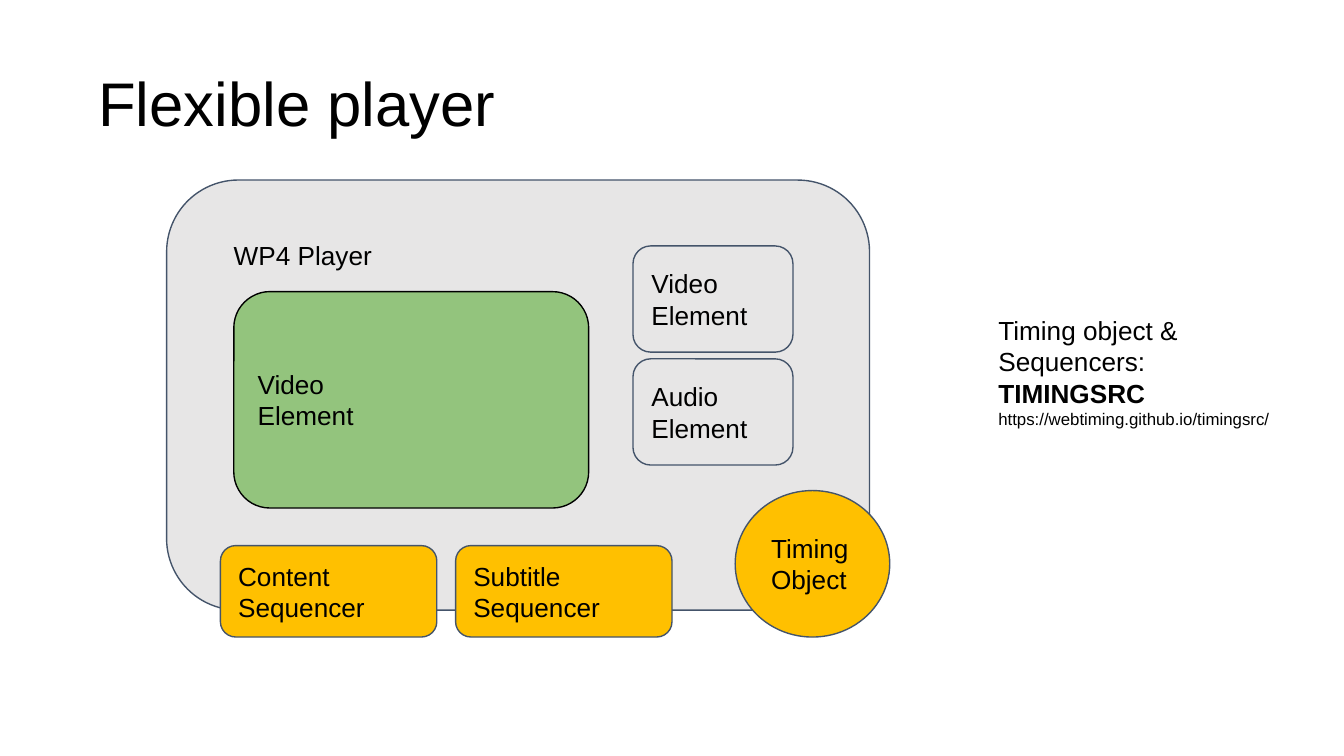
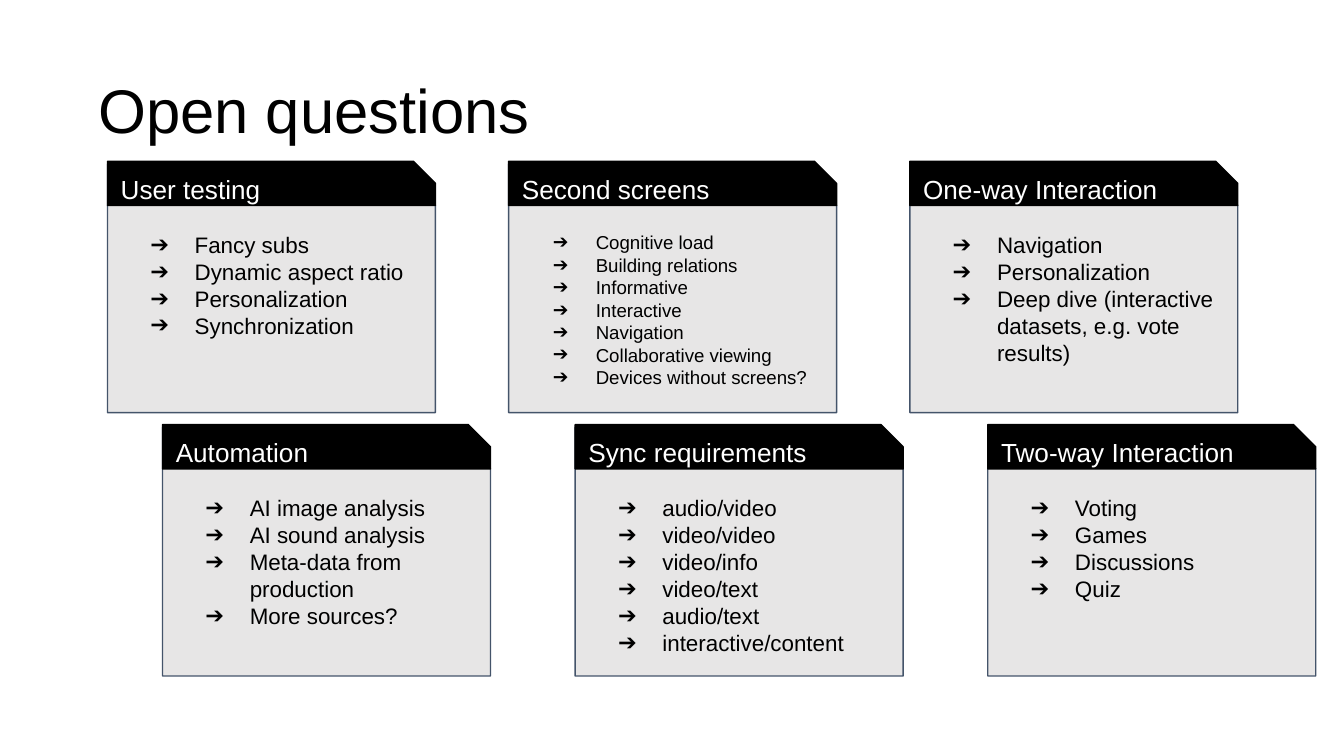
"""Build two slides: the flexible player diagram and the open questions cards."""
from lxml.etree import SubElement
from pptx import Presentation
from pptx.dml.color import RGBColor
from pptx.enum.shapes import MSO_SHAPE
from pptx.enum.text import MSO_ANCHOR, MSO_AUTO_SIZE, PP_ALIGN
from pptx.oxml.ns import qn
from pptx.util import Inches, Pt

FONT = "Arial"
BLACK, WHITE, GREY, SLATE = "000000", "FFFFFF", "E7E6E6", "44546A"
AMBER, GREEN = "FFC000", "93C47D"


def rgb(color):
    return RGBColor.from_string(color)


def add_box(shapes, kind, at, lines=(), fill=None, line=SLATE, size=14, color=BLACK, adj=None):
    at = [Inches(v) for v in at]
    if kind is None:
        sp = shapes.add_textbox(*at)
    else:
        sp = shapes.add_shape(kind, *at)
        sp.shadow.inherit = False
        sp.fill.solid()
        sp.fill.fore_color.rgb = rgb(fill)
        sp.line.color.rgb = rgb(line)
        sp.line.width = Pt(0.75)
        if adj is not None:
            sp.adjustments[0] = adj
    tf = sp.text_frame
    tf.word_wrap = True
    tf.margin_left = tf.margin_right = tf.margin_top = tf.margin_bottom = Inches(0.1)
    tf.vertical_anchor = MSO_ANCHOR.TOP if kind is None else MSO_ANCHOR.MIDDLE
    if kind is None:
        tf.auto_size = MSO_AUTO_SIZE.SHAPE_TO_FIT_TEXT
    tf.text = "\n".join(lines)
    for p in tf.paragraphs:
        p.alignment = PP_ALIGN.LEFT
        for r in p.runs:
            r.font.name = FONT
            r.font.size = Pt(size)
            r.font.color.rgb = rgb(color)
    return sp


prs = Presentation()
prs.slide_width, prs.slide_height = Inches(10), Inches(10 * 9 / 16)

slides = []
for title, top in [("Flexible player", 0.25), ("Open questions", 0.3)]:
    s = prs.slides.add_slide(prs.slide_layouts[5])
    sp = s.shapes.title
    sp.left, sp.top, sp.width, sp.height = [Inches(v) for v in (0.69, top, 8.62, 1.09)]
    tf = sp.text_frame
    tf.text = title
    tf.auto_size = MSO_AUTO_SIZE.NONE
    tf.vertical_anchor = MSO_ANCHOR.MIDDLE
    tf.margin_left = tf.margin_right = Inches(0.04)
    tf.margin_top = tf.margin_bottom = Inches(0.02)
    p = tf.paragraphs[0]
    p.alignment = PP_ALIGN.LEFT
    p.line_spacing = 0.9
    r = p.runs[0]
    r.font.name, r.font.size = FONT, Pt(33)
    r.font.color.rgb = rgb(BLACK)
    slides.append(s)

player, questions = slides

ROUND, OVAL = MSO_SHAPE.ROUNDED_RECTANGLE, MSO_SHAPE.OVAL
parts = [
    (ROUND, (1.24, 1.34, 5.23, 3.2), [], GREY, SLATE),
    (ROUND, (1.64, 4.06, 1.61, 0.68), ["Content", "Sequencer"], AMBER, SLATE),
    (ROUND, (3.39, 4.06, 1.61, 0.68), ["Subtitle", "Sequencer"], AMBER, SLATE),
    (OVAL, (5.47, 3.65, 1.15, 1.09), ["Timing", "Object"], AMBER, SLATE),
    (None, (1.64, 1.68, 1.61, 0.44), ["WP4 Player"], None, None),
    (ROUND, (1.74, 2.17, 2.64, 1.61), ["Video", "Element"], GREEN, BLACK),
    (ROUND, (4.71, 1.83, 1.19, 0.79), ["Video", "Element"], GREY, SLATE),
    (ROUND, (4.71, 2.67, 1.19, 0.79), ["Audio", "Element"], GREY, SLATE),
]
for kind, at, lines, fill, line in parts:
    add_box(player.shapes, kind, at, lines, fill, line)

credit = ["Timing object & Sequencers:", "TIMINGSRC", "https://webtiming.github.io/timingsrc/"]
sp = add_box(player.shapes, None, (7.33, 2.24, 2.23, 1.06), credit)
_, name, link = sp.text_frame.paragraphs
name.runs[0].font.bold = True
link.runs[0].font.size = Pt(9)

SNIP = MSO_SHAPE.SNIP_1_RECTANGLE
rows = [
    (0.8, 6.77, 1.2, [
        ("User testing", 12, 2.31, 1.01,
         ["Fancy subs", "Dynamic aspect ratio", "Personalization", "Synchronization"]),
        ("Second screens", 10, 2.39, 1.38,
         ["Cognitive load", "Building relations", "Informative", "Interactive", "Navigation",
          "Collaborative viewing", "Devices without screens?"]),
        ("One-way Interaction", 12, 2.31, 1.21,
         ["Navigation", "Personalization", "Deep dive (interactive datasets, e.g. vote results)"]),
    ]),
    (1.21, 7.35, 3.16, [
        ("Automation", 12, 2.31, 1.21,
         ["AI image analysis", "AI sound analysis", "Meta-data from production", "More sources?"]),
        ("Sync requirements", 12, 2.31, 1.41,
         ["audio/video", "video/video", "video/info", "video/text", "audio/text",
          "interactive/content"]),
        ("Two-way Interaction", 12, 2.31, 1.01, ["Voting", "Games", "Discussions", "Quiz"]),
    ]),
]
for first, last, top, cards in rows:
    step = (last - first) / (len(cards) - 1)
    for i, (heading, size, width, height, items) in enumerate(cards):
        x = first + i * step
        card = questions.shapes.add_group_shape().shapes
        add_box(card, SNIP, (x, top + 0.02, 2.44, 1.85), fill=GREY)
        add_box(card, SNIP, (x, top, 2.44, 0.33), [heading], BLACK, BLACK, color=WHITE, adj=0.5)
        sp = add_box(card, None, (x + 0.05, top + 0.42, width, height), items, size=size)
        for p in sp.text_frame.paragraphs:
            pPr = p._p.get_or_add_pPr()
            pPr.set("marL", str(Inches(0.5)))
            pPr.set("indent", str(Inches(-0.33 if size == 12 else -0.32)))
            SubElement(SubElement(pPr, qn("a:buClr")), qn("a:srgbClr"), val=BLACK)
            SubElement(pPr, qn("a:buFont"), typeface=FONT)
            SubElement(pPr, qn("a:buChar"), char="➔")

prs.save("out.pptx")
